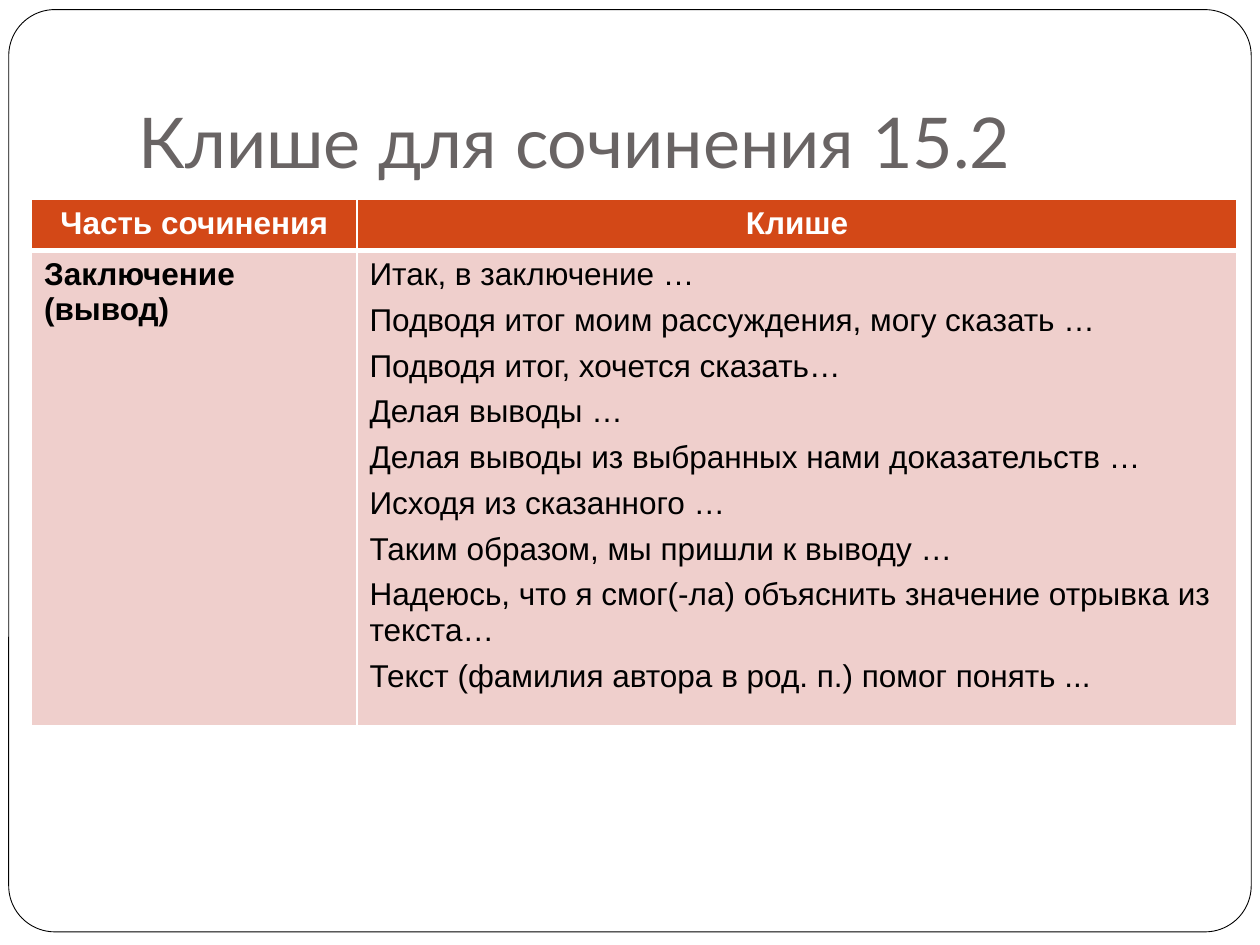
from dataclasses import dataclass

from lxml import etree
from pptx import Presentation
from pptx import util as u
from pptx.dml.color import RGBColor
from pptx.enum import shapes, text
from pptx.oxml import ns

Pt = u.Pt


@dataclass(frozen=True)
class Theme:
    white: str = "FFFFFF"
    black: str = "000000"
    title: str = "696464"
    header: str = "D34817"
    body: str = "EFCFCC"
    title_font: str = "Lato"
    body_font: str = "Arial"
    title_size: int = 40
    body_size: int = 18


THEME = Theme()
HEADERS = ["Часть сочинения", "Клише"]
PART = "Заключение\n(вывод)"
CLICHES = [
    "Итак, в заключение …",
    "Подводя итог моим рассуждения, могу сказать …",
    "Подводя итог, хочется сказать…",
    "Делая выводы …",
    "Делая выводы из выбранных нами доказательств …",
    "Исходя из сказанного …",
    "Таким образом, мы пришли к выводу …",
    "Надеюсь, что я смог(-ла) объяснить значение отрывка из текста…",
    "Текст (фамилия автора в род. п.) помог понять ...",
]


def rgb(color):
    return RGBColor.from_string(color)


def write(tf, lines, font, size, color, bold=False, align=text.PP_ALIGN.LEFT, after=0):
    for i, line in enumerate(lines):
        p = tf.paragraphs[0] if i == 0 else tf.add_paragraph()
        p.text = line
        p.alignment = align
        p.space_after = Pt(after)
        p.font.name = font
        p.font.size = Pt(size)
        p.font.bold = bold
        p.font.color.rgb = rgb(color)


def add_frame(s):
    sp = s.shapes.add_shape(
        shapes.MSO_SHAPE.ROUNDED_RECTANGLE, Pt(5), Pt(5.5), Pt(710), Pt(527))
    sp.adjustments[0] = 0.05
    sp.shadow.inherit = False
    sp.fill.solid()
    sp.fill.fore_color.rgb = rgb(THEME.white)
    sp.line.color.rgb = rgb(THEME.black)
    sp.line.width = Pt(0.5)


def add_title(s, title):
    tf = s.shapes.add_textbox(Pt(72), Pt(21.6), Pt(612), Pt(90)).text_frame
    tf.word_wrap = True
    tf.vertical_anchor = text.MSO_ANCHOR.BOTTOM
    tf.margin_bottom = Pt(7.2)
    write(tf, [title], THEME.title_font, THEME.title_size, THEME.title)


def set_borders(cell, bottom):
    tcPr = cell._tc.get_or_add_tcPr()
    widths = {"lnL": 1, "lnR": 1, "lnT": 1, "lnB": bottom}
    for i, (tag, width) in enumerate(widths.items()):
        ln = etree.Element(ns.qn("a:" + tag), w=str(Pt(width)))
        fill = etree.SubElement(ln, ns.qn("a:solidFill"))
        etree.SubElement(fill, ns.qn("a:srgbClr"), val=THEME.white)
        tcPr.insert(i, ln)


def fill_cell(cell, lines, fill, color, bottom=1, **style):
    cell.fill.solid()
    cell.fill.fore_color.rgb = rgb(fill)
    set_borders(cell, bottom)
    write(cell.text_frame, lines, THEME.body_font, THEME.body_size, color, **style)


def add_cliche_table(s):
    table = s.shapes.add_table(2, 2, Pt(18), Pt(114), Pt(689), Pt(285)).table
    for column, width in zip(table.columns, (186, 503)):
        column.width = Pt(width)
    for row, height in zip(table.rows, (29.2, 255.8)):
        row.height = Pt(height)
    for i, header in enumerate(HEADERS):
        fill_cell(table.cell(0, i), [header], THEME.header, THEME.white,
                  bottom=3, bold=True, align=text.PP_ALIGN.CENTER)
    fill_cell(table.cell(1, 0), [PART], THEME.body, THEME.black, bold=True)
    fill_cell(table.cell(1, 1), CLICHES, THEME.body, THEME.black, after=6)


def main():
    prs = Presentation()
    prs.slide_width, prs.slide_height = Pt(720), Pt(540)
    s = prs.slides.add_slide(prs.slide_layouts[6])
    add_frame(s)
    add_title(s, "Клише для сочинения 15.2")
    add_cliche_table(s)
    prs.save("out.pptx")


if __name__ == "__main__":
    main()
